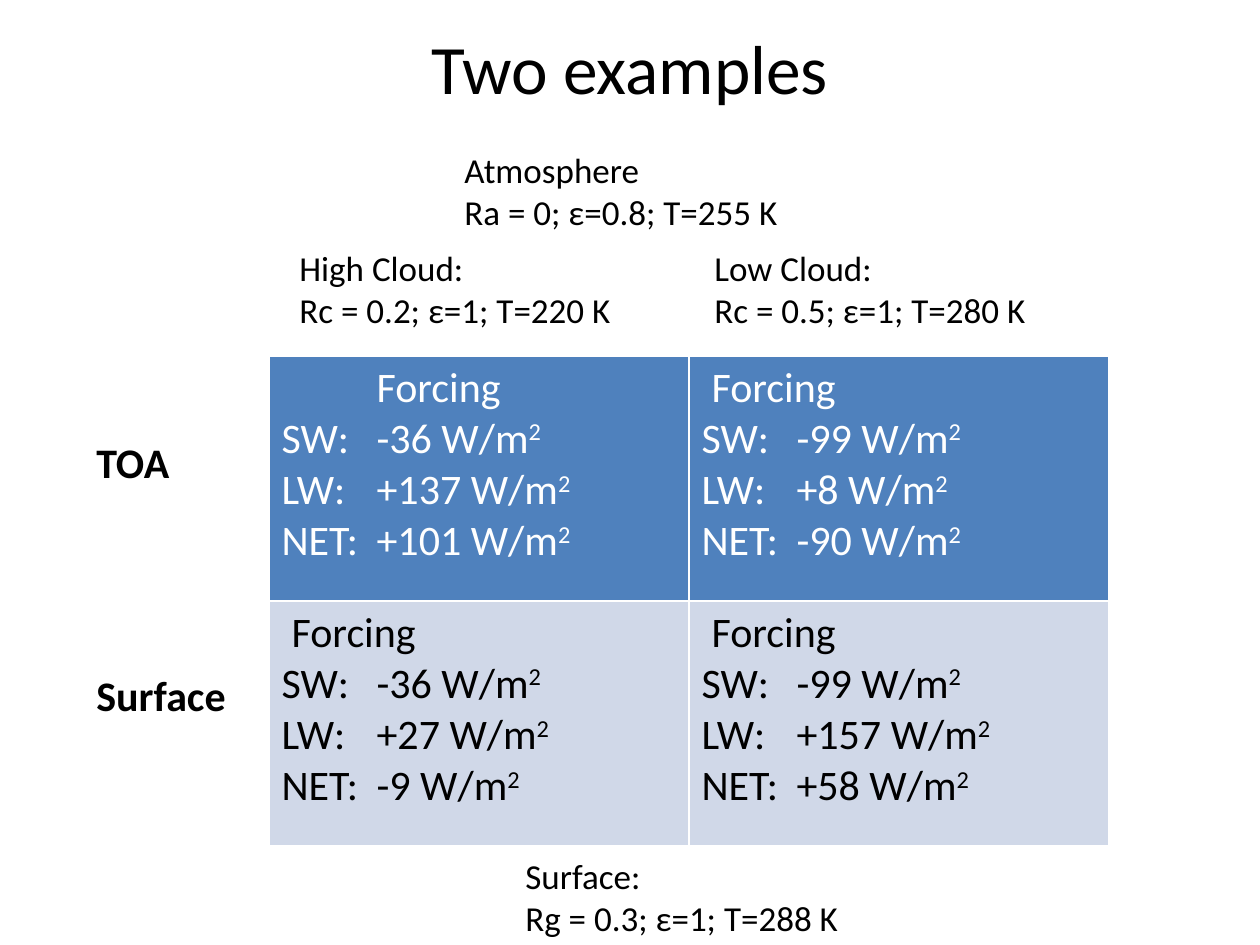
from lxml import etree
from pptx import Presentation
from pptx.dml.color import RGBColor
from pptx.enum.text import MSO_ANCHOR, MSO_AUTO_SIZE, PP_ALIGN
from pptx.oxml.ns import qn
from pptx.util import Emu, Pt

CENTER = PP_ALIGN.CENTER
MIDDLE = MSO_ANCHOR.MIDDLE
GROW = MSO_AUTO_SIZE.SHAPE_TO_FIT_TEXT
NO_FIT = MSO_AUTO_SIZE.NONE

EMU_PER_PX = 914400 / 126
BLACK, WHITE = "000000", "FFFFFF"
HEADER_BLUE, PALE_BLUE = "4F81BD", "D0D8E8"
VALUE_INDENT = 95
HEADING_INDENT = 10


def px(length):
    return Emu(round(length * EMU_PER_PX))


def color(hex_string):
    return RGBColor.from_string(hex_string)


class SlideBuilder:
    font_name = "Calibri"

    def __init__(self, page):
        self.page = page

    def add_span(self, para, text, ink=BLACK, **format_values):
        span = para.add_run()
        span.text = text
        for name, value in {"name": self.font_name, **format_values}.items():
            setattr(span.font, name, value)
        span.font.color.rgb = color(ink)
        return span

    def title(self, text, left, top, width, height):
        box = self.page.shapes.title
        place = {"left": left, "top": top, "width": width, "height": height}
        for name, value in place.items():
            setattr(box, name, px(value))
        frame = box.text_frame
        frame.auto_size = NO_FIT
        frame.vertical_anchor = MIDDLE
        para = frame.paragraphs[0]
        para.alignment = CENTER
        self.add_span(para, text, size=Pt(39.6))

    def text(self, lines, left, top, width, height, size=20, bold=False):
        box = self.page.shapes.add_textbox(*map(px, (left, top, width, height)))
        frame = box.text_frame
        frame.word_wrap = True
        frame.auto_size = GROW
        for index, line in enumerate(lines):
            para = frame.add_paragraph() if index else frame.paragraphs[0]
            self.add_span(para, line, size=Pt(size), bold=bold)

    def borders(self, cell):
        properties = cell._tc.get_or_add_tcPr()
        for side in ("a:lnL", "a:lnR", "a:lnT", "a:lnB"):
            line = etree.SubElement(properties, qn(side), w=str(Pt(1)))
            fill = etree.SubElement(line, qn("a:solidFill"))
            etree.SubElement(fill, qn("a:srgbClr"), val=WHITE)

    def forcing_cell(self, cell, values, fill, ink, heading_indent):
        self.borders(cell)
        cell.fill.solid()
        cell.fill.fore_color.rgb = color(fill)
        frame = cell.text_frame

        heading = frame.paragraphs[0]
        heading._p.get_or_add_pPr().set("marL", str(px(heading_indent)))
        self.add_span(heading, "Forcing", ink, size=Pt(24))

        # Each value lines up at a tab stop, followed by a raised exponent
        for label, value in zip(("SW:", "LW:", "NET:"), values):
            para = frame.add_paragraph()
            tabs = etree.SubElement(para._p.get_or_add_pPr(), qn("a:tabLst"))
            etree.SubElement(tabs, qn("a:tab"), pos=str(px(VALUE_INDENT)), algn="l")
            self.add_span(para, f"{label}\t{value} W/m", ink, size=Pt(24))
            exponent = self.add_span(para, "2", ink, size=Pt(24))
            exponent._r.get_or_add_rPr().set("baseline", "30000")

    def forcing_table(self, rows, left, top, width, height):
        frame = self.page.shapes.add_table(
            len(rows), len(rows[0][0]), *map(px, (left, top, width, height)))
        table = frame.table
        for row, (cells, fill, ink) in enumerate(rows):
            for column, values in enumerate(cells):
                indent = VALUE_INDENT if row == column == 0 else HEADING_INDENT
                self.forcing_cell(table.cell(row, column), values, fill, ink, indent)


def main():
    deck = Presentation()
    deck.slide_width, deck.slide_height = px(1260), px(945)
    builder = SlideBuilder(deck.slides.add_slide(deck.slide_layouts[5]))
    builder.title("Two examples", 63, 21, 1134, 91)

    # Forcing values: one row per level, one column per cloud type
    builder.forcing_table([
        ([("-36", "+137", "+101"), ("-99", "+8", "-90")], HEADER_BLUE, WHITE),
        ([("-36", "+27", "-9"), ("-99", "+157", "+58")], PALE_BLUE, BLACK),
    ], 269, 356, 840, 490)

    # Row labels
    for label, top, width in (("TOA", 430, 112), ("Surface", 663, 184)):
        builder.text([label], 84, top, width, 63, size=24, bold=True)

    # Parameters of each layer
    for name, values, left, top in (
        ("High Cloud:", "Rc = 0.2; ε=1; T=220 K", 287, 240),
        ("Surface:", "Rg = 0.3; ε=1; T=288 K", 513, 848),
        ("Low Cloud:", "Rc = 0.5; ε=1; T=280 K", 702, 240),
        ("Atmosphere", "Ra = 0; ε=0.8; T=255 K", 452, 142),
    ):
        builder.text([name, values], left, top, 378, 97)

    deck.save("out.pptx")


if __name__ == "__main__":
    main()
